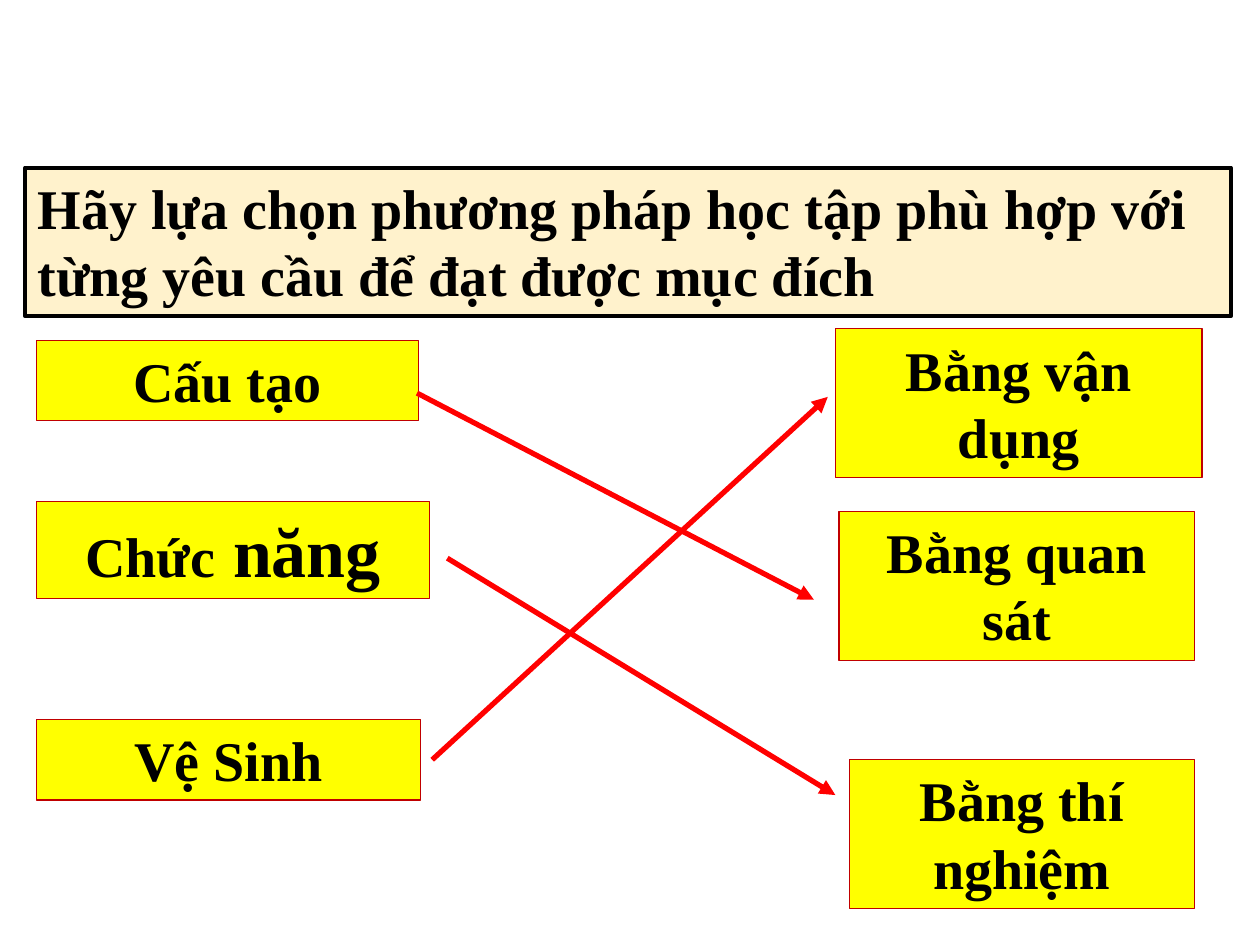
from lxml import etree
from pptx import Presentation
from pptx.dml.color import RGBColor
from pptx.enum.shapes import MSO_CONNECTOR, MSO_SHAPE
from pptx.enum.text import MSO_ANCHOR, MSO_AUTO_SIZE, PP_ALIGN
from pptx.oxml.ns import qn
from pptx.util import Pt

PX = 9144  # 100 px to the inch
FONT = "Times New Roman"
LEFT, CENTER = PP_ALIGN.LEFT, PP_ALIGN.CENTER

BLACK = RGBColor(0x00, 0x00, 0x00)
CREAM = RGBColor(0xFF, 0xF2, 0xCC)
YELLOW = RGBColor(0xFF, 0xFF, 0x00)
DARK_RED = RGBColor(0xC0, 0x00, 0x00)
RED = RGBColor(0xFF, 0x00, 0x00)

QUESTION_STYLE = {"fill": CREAM, "line": BLACK, "width": 2.25, "align": LEFT}
CARD_STYLE = {"fill": YELLOW, "line": DARK_RED, "width": 0.75, "align": CENTER}

# (left, top, width, height), runs of (text, size)
QUESTION = (
    (20, 133, 957, 118),
    [("Hãy lựa chọn phương pháp học tập phù hợp với từng yêu cầu để đạt được mục đích", 32)],
)
CARDS = [
    ((29, 270, 303, 64), [("Cấu tạo", 32)]),
    ((29, 398, 312, 77), [("Chức", 32), (" năng", 40)]),
    ((29, 571, 305, 64), [("Vệ Sinh", 32)]),
    ((663, 261, 291, 118), [("Bằng vận dụng", 32)]),
    ((666, 406, 282, 118), [("Bằng quan sát", 32)]),
    ((674, 603, 274, 118), [("Bằng thí nghiệm", 32)]),
]
# from x, from y, to x, to y
ARROWS = [
    (331, 312, 646, 476),
    (355, 443, 663, 631),
    (343, 603, 657, 315),
]


def scaled(lengths):
    return [length * PX for length in lengths]


def set_all(target, values):
    for name, value in values.items():
        setattr(target, name, value)


def add_box(slide, bounds, runs, style):
    shape = slide.shapes.add_shape(MSO_SHAPE.RECTANGLE, *scaled(bounds))
    shape.shadow.inherit = False
    shape.fill.solid()
    shape.fill.fore_color.rgb = style["fill"]
    shape.line.color.rgb = style["line"]
    shape.line.width = Pt(style["width"])
    set_all(shape.text_frame, {
        "word_wrap": True,
        "auto_size": MSO_AUTO_SIZE.SHAPE_TO_FIT_TEXT,
        "vertical_anchor": MSO_ANCHOR.TOP,
    })
    paragraph = shape.text_frame.paragraphs[0]
    paragraph.alignment = style["align"]
    for text, size in runs:
        run = paragraph.add_run()
        run.text = text
        set_all(run.font, {"name": FONT, "size": Pt(size), "bold": True})
        run.font.color.rgb = BLACK


def add_arrow(slide, ends):
    connector = slide.shapes.add_connector(MSO_CONNECTOR.STRAIGHT, *scaled(ends))
    connector.line.color.rgb = RED
    connector.line.width = Pt(3)
    properties = connector.line._get_or_add_ln()
    etree.SubElement(properties, qn("a:tailEnd"), type="triangle")
    etree.SubElement(connector._element.spPr, qn("a:effectLst"))


def main():
    presentation = Presentation()
    presentation.slide_width, presentation.slide_height = scaled((1000, 750))
    slide = presentation.slides.add_slide(presentation.slide_layouts[6])
    add_box(slide, *QUESTION, QUESTION_STYLE)
    for bounds, runs in CARDS:
        add_box(slide, bounds, runs, CARD_STYLE)
    for ends in ARROWS:
        add_arrow(slide, ends)
    presentation.save("out.pptx")


if __name__ == "__main__":
    main()
